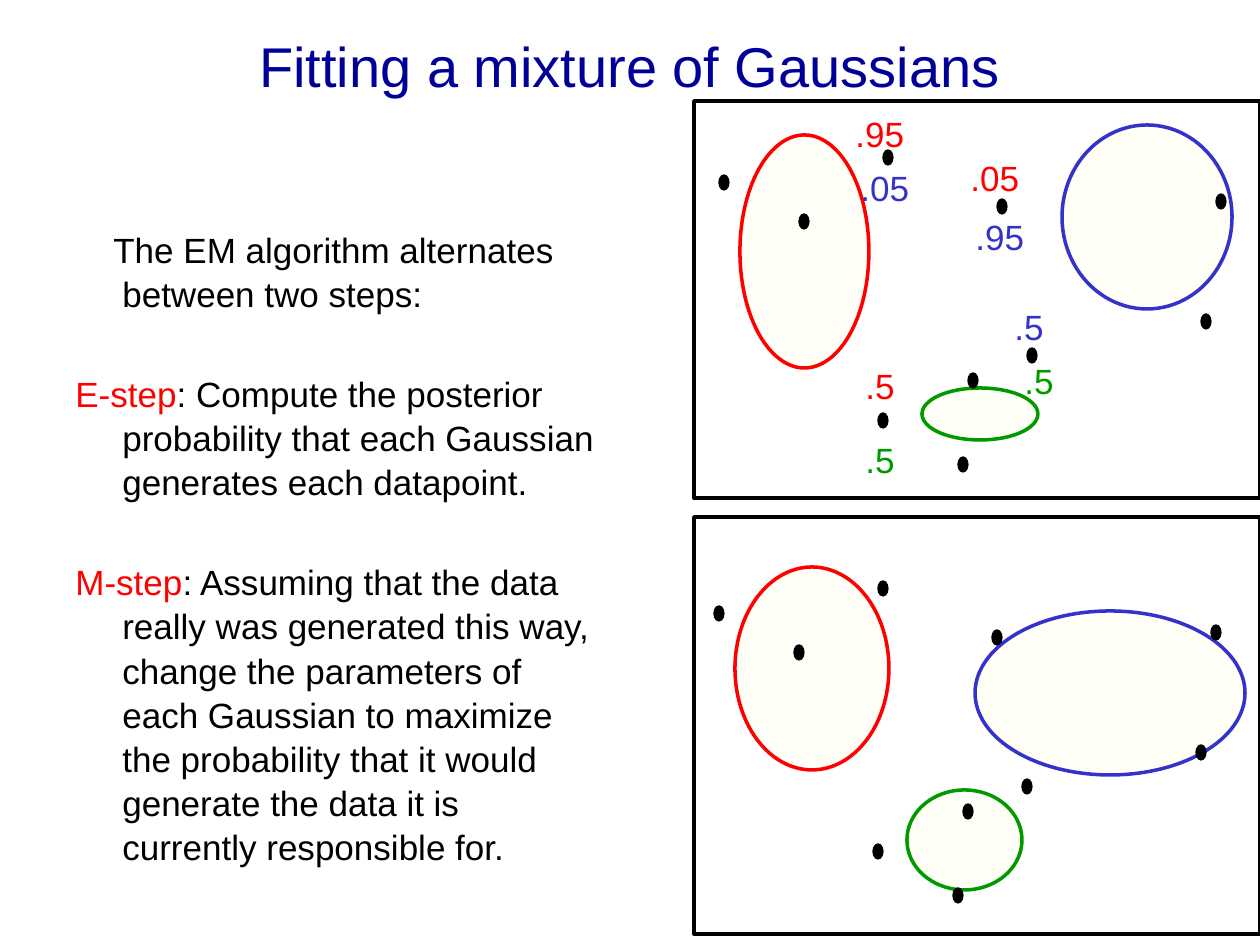
import pptx
import pptx.dml.color
import pptx.enum.shapes
import pptx.enum.text
import pptx.util

PX = 914400 / 126
COLORS = {
    "title": "000099", "black": "000000", "paper": "FFFFF7",
    "red": "FF0000", "green": "009900", "blue": "3333CC",
}
SHAPE = pptx.enum.shapes.MSO_SHAPE
ALIGN = pptx.enum.text.PP_ALIGN
ANCHOR = pptx.enum.text.MSO_ANCHOR
FIT = pptx.enum.text.MSO_AUTO_SIZE

DOTS = [(25, 74), (105, 113), (264, 356), (274, 272), (184, 312),
        (333, 247), (303, 98), (507, 213), (522, 93), (189, 49)]
BEFORE = {"red": (46, 34, 129, 233), "green": (228, 287, 116, 52),
          "blue": (368, 24, 170, 184)}
AFTER = {"red": (41, 50, 154, 203), "green": (213, 273, 115, 100),
         "blue": (281, 94, 270, 164)}
POSTERIORS = [
    (".95", "red", 149, 5), (".05", "blue", 154, 59),
    (".05", "red", 264, 49), (".95", "blue", 269, 108),
    (".5", "blue", 308, 198), (".5", "green", 318, 252),
    (".5", "red", 159, 257), (".5", "green", 159, 331),
]
STEPS = [
    ("", "The EM algorithm alternates between two steps:", -9, 0),
    ("E-step", ": Compute the posterior probability that each Gaussian "
     "generates each datapoint.", -47, 56),
    ("M-step", ": Assuming that the data really was generated this way, "
     "change the parameters of each Gaussian to maximize the probability "
     "that it would generate the data it is currently responsible for.",
     -47, 56),
]


def px(n):
    """Turn px into EMU."""
    return pptx.util.Emu(round(n * PX))


def rgb(name):
    """Look up a named colour."""
    return pptx.dml.color.RGBColor.from_string(COLORS[name])


def apply(obj, values):
    """Set each attribute named in a dict of format values."""
    for name, value in values.items():
        setattr(obj, name, value)


def add_run(p, text, color, size=20):
    """Append a styled run to a paragraph."""
    r = p.add_run()
    r.text = text
    apply(r.font, {"name": "Arial", "size": pptx.util.Pt(size)})
    r.font.color.rgb = rgb(color)


def add_text(s, box, **frame):
    """Add a wrapping text box and return its text frame."""
    tf = s.shapes.add_textbox(*map(px, box)).text_frame
    apply(tf, {"word_wrap": True, **frame})
    return tf


def add_figure(s, kind, box, line, fill=None, width=2):
    """Add an outlined shape, filled if a fill is named."""
    sp = s.shapes.add_shape(kind, *map(px, box))
    sp.shadow.inherit = False
    if fill:
        sp.fill.solid()
        sp.fill.fore_color.rgb = rgb(fill)
    else:
        sp.fill.background()
    sp.line.color.rgb = rgb(line)
    sp.line.width = pptx.util.Pt(width)


def add_title(s, box, text):
    """Place the centred title."""
    p = add_text(s, box, vertical_anchor=ANCHOR.MIDDLE).paragraphs[0]
    p.alignment = ALIGN.CENTER
    add_run(p, text, "title", 32)


def add_steps(s, box, steps):
    """Place the explanation with hanging indents and red step names."""
    tf = add_text(s, box)
    for i, (name, text, indent, gap) in enumerate(steps):
        p = tf.add_paragraph() if i else tf.paragraphs[0]
        apply(p, {"line_spacing": 1.05, "space_before": px(gap)})
        pPr = p._p.get_or_add_pPr()
        pPr.set("marL", str(px(47)))
        pPr.set("indent", str(px(indent)))
        if name:
            add_run(p, name, "red")
        add_run(p, text, "black")


def add_panel(s, box, gaussians, shift=(0, 0), labels=()):
    """Place one framed scatter of datapoints with its Gaussians."""
    left, top = box[:2]
    for color, (x, y, w, h) in gaussians.items():
        add_figure(s, SHAPE.OVAL, (left + x, top + y, w, h), color, "paper")
    for x, y in DOTS:
        dot = (left + x + shift[0], top + y + shift[1], 10, 15)
        add_figure(s, SHAPE.OVAL, dot, "black", "black", 0.75)
    for text, color, x, y in labels:
        tf = add_text(s, (left + x, top + y, 89, 54),
                      auto_size=FIT.SHAPE_TO_FIT_TEXT)
        add_run(tf.paragraphs[0], text, color)
    add_figure(s, SHAPE.RECTANGLE, box, "black")


def main():
    """Build and save the slide."""
    prs = pptx.Presentation()
    apply(prs, {"slide_width": px(1260), "slide_height": px(945)})
    s = prs.slides.add_slide(prs.slide_layouts[6])
    add_title(s, (63, -14, 1134, 158), "Fitting a mixture of Gaussians")
    add_steps(s, (63, 220, 552, 698), STEPS)
    add_panel(s, (694, 101, 566, 397), BEFORE, labels=POSTERIORS)
    add_panel(s, (694, 517, 566, 417), AFTER, shift=(-5, 15))
    prs.save("out.pptx")


if __name__ == "__main__":
    main()
